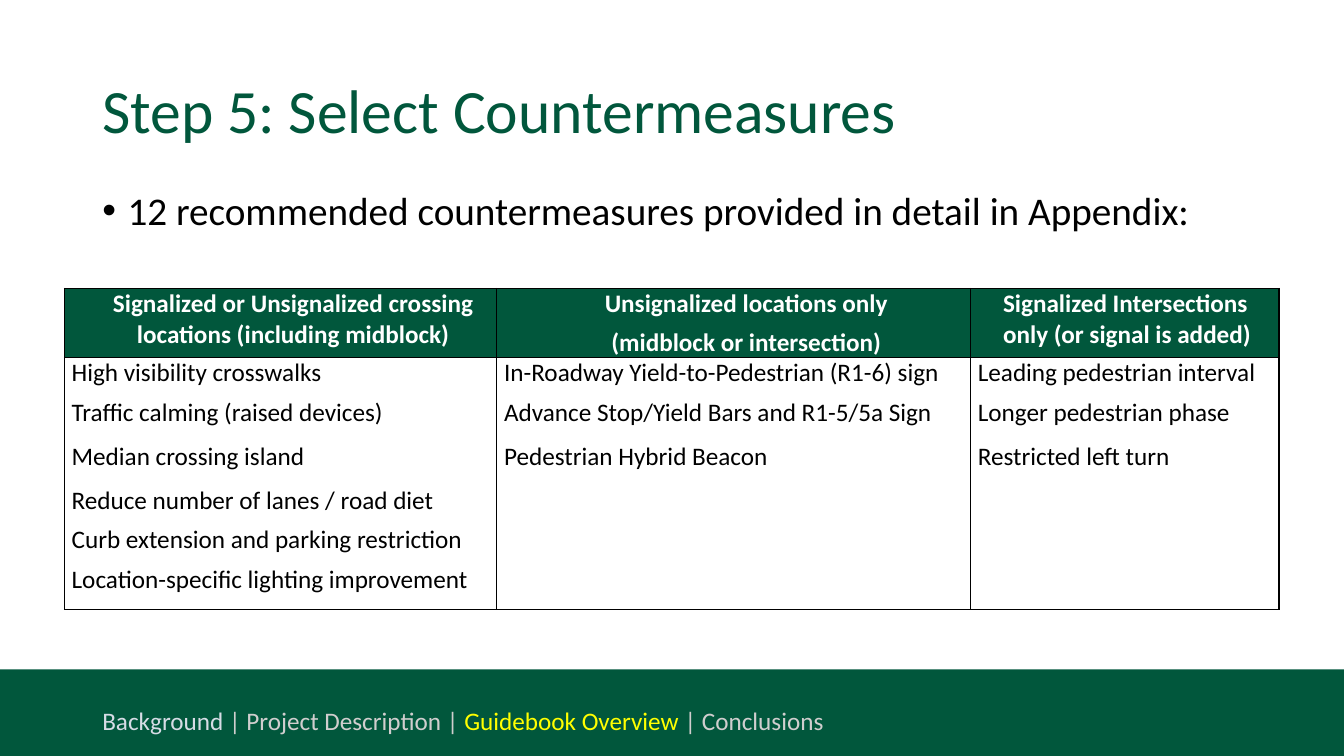
from lxml.etree import SubElement
from pptx import Presentation
from pptx.dml.color import RGBColor
from pptx.enum.shapes import MSO_SHAPE as SHAPE
from pptx.enum.text import MSO_ANCHOR as ANCHOR, PP_ALIGN as ALIGN
from pptx.oxml import parse_xml
from pptx.oxml.ns import nsdecls, qn
from pptx.util import Pt

GREEN = RGBColor(0x01, 0x57, 0x3C)
WHITE = RGBColor(0xFF, 0xFF, 0xFF)
BLACK = RGBColor(0x00, 0x00, 0x00)
YELLOW = RGBColor(0xFF, 0xFF, 0x00)
PALE_BLUE = RGBColor(0xD6, 0xDC, 0xE5)
PALE_GREY = RGBColor(0xD0, 0xCE, 0xCE)

COLUMN_WIDTHS = [308.9, 338.4, 220.3]
ROW_HEIGHTS = [49, 28.6, 31.9, 31, 56.2, 32.4]
HEADERS = [
    ["Signalized or Unsignalized crossing locations (including midblock)"],
    ["Unsignalized locations only", "(midblock or intersection)"],
    ["Signalized Intersections only (or signal is added)"],
]
COUNTERMEASURES = [
    [["High visibility crosswalks"],
     ["In-Roadway Yield-to-Pedestrian (R1-6) sign"],
     ["Leading pedestrian interval"]],
    [["Traffic calming (raised devices)"],
     ["Advance Stop/Yield Bars and R1-5/5a Sign"],
     ["Longer pedestrian phase"]],
    [["Median crossing island"],
     ["Pedestrian Hybrid Beacon"],
     ["Restricted left turn"]],
    [["Reduce number of lanes / road diet",
      "Curb extension and parking restriction"], [], []],
    [["Location-specific lighting improvement"], [], []],
]
FOOTER = [
    ("Background ", PALE_BLUE),
    ("| Project Description | ", PALE_GREY),
    ("Guidebook Overview ", YELLOW),
    ("| Conclusions", PALE_GREY),
]


def apply(target, values):
    """Set every attribute named in a dict of format values."""
    for name, value in values.items():
        setattr(target, name, value)


def add_run(p, text, size, color, bold=False):
    """Append a formatted run to a paragraph."""
    r = p.add_run()
    r.text = text
    apply(r.font, {"name": "Calibri", "size": Pt(size), "bold": bold})
    r.font.color.rgb = color


def set_indent(p, left, first):
    """Set the left margin and first-line indent of a paragraph."""
    pPr = p._p.get_or_add_pPr()
    pPr.set("marL", str(Pt(left)))
    pPr.set("indent", str(Pt(first)))


def add_text(s, box, runs, size, anchor=ANCHOR.TOP, **spacing):
    """Add a one-paragraph text box and return its paragraph."""
    tf = s.shapes.add_textbox(*map(Pt, box)).text_frame
    apply(tf, {"word_wrap": True, "vertical_anchor": anchor})
    p = tf.paragraphs[0]
    apply(p, spacing)
    for text, color in runs:
        add_run(p, text, size, color)
    return p


def add_bullet(p):
    """Give a paragraph a hanging round bullet."""
    set_indent(p, 18, -18)
    pPr = p._p.get_or_add_pPr()
    SubElement(pPr, qn("a:buFont")).set("typeface", "Arial")
    SubElement(pPr, qn("a:buChar")).set("char", "•")


def add_band(s, box, color):
    """Add a plain filled rectangle."""
    sp = s.shapes.add_shape(SHAPE.RECTANGLE, *map(Pt, box))
    sp.shadow.inherit = False
    sp.fill.solid()
    sp.fill.fore_color.rgb = color
    sp.line.fill.background()


def set_borders(cell, shown):
    """Draw black borders on the shown sides and none on the others."""
    tcPr = cell._tc.get_or_add_tcPr()
    for i, side in enumerate("LRTB"):
        paint = (f'<a:solidFill><a:srgbClr val="{BLACK}"/></a:solidFill>'
                 if side in shown else "<a:noFill/>")
        tcPr.insert(i, parse_xml(
            f'<a:ln{side} {nsdecls("a")} w="{Pt(1)}">{paint}</a:ln{side}>'))


def fill_cell(cell, lines, color, bold, align, indent):
    """Write the lines of a cell as spaced paragraphs."""
    apply(cell, {"margin_left": Pt(5.2), "margin_right": Pt(5.2),
                 "margin_top": 0, "margin_bottom": 0})
    tf = cell.text_frame
    for i, line in enumerate(lines):
        p = tf.add_paragraph() if i else tf.paragraphs[0]
        apply(p, {"alignment": align, "space_before": Pt(3),
                  "space_after": Pt(3)})
        set_indent(p, *indent)
        add_run(p, line, 18, color, bold)


def add_countermeasures(s, left, top):
    """Add the table of countermeasures by location type."""
    rows = [HEADERS] + COUNTERMEASURES
    table = s.shapes.add_table(
        len(rows), len(HEADERS), Pt(left), Pt(top),
        Pt(sum(COLUMN_WIDTHS)), Pt(sum(ROW_HEIGHTS))).table
    apply(table, {"first_row": False, "horz_banding": False})
    for column, width in zip(table.columns, COLUMN_WIDTHS):
        column.width = Pt(width)
    for i, (row, height) in enumerate(zip(rows, ROW_HEIGHTS)):
        table.rows[i].height = Pt(height)
        for j, lines in enumerate(row):
            cell = table.cell(i, j)
            if i == 0:
                align = ALIGN.CENTER if j < 2 else ALIGN.LEFT
                fill_cell(cell, lines, WHITE, True, align, (18, 0))
                cell.fill.solid()
                cell.fill.fore_color.rgb = GREEN
                set_borders(cell, "LRTB")
            else:
                hang = 16.5 if j == 0 else 10
                fill_cell(cell, lines, BLACK, False, ALIGN.LEFT, (hang, -hang))
                cell.fill.background()
                edges = {1: "T", len(rows) - 1: "B"}
                set_borders(cell, "LR" + edges.get(i, ""))


def main():
    """Build the slide and save it."""
    prs = Presentation()
    apply(prs, {"slide_width": Pt(960), "slide_height": Pt(540)})
    s = prs.slides.add_slide(prs.slide_layouts[6])
    add_band(s, (0, 478.1, 960, 61.9), GREEN)
    add_text(s, (66, 28.8, 828, 104.4),
             [("Step 5: Select Countermeasures", GREEN)], 44,
             ANCHOR.MIDDLE, line_spacing=0.9)
    add_bullet(add_text(
        s, (66, 133.2, 838, 54.7),
        [("12 recommended countermeasures provided in detail in Appendix:",
          BLACK)], 28, line_spacing=0.9, space_before=Pt(10)))
    add_text(s, (66, 500.4, 602, 28.8), FOOTER, 18)
    add_countermeasures(s, 46, 206)
    prs.save("out.pptx")


if __name__ == "__main__":
    main()
